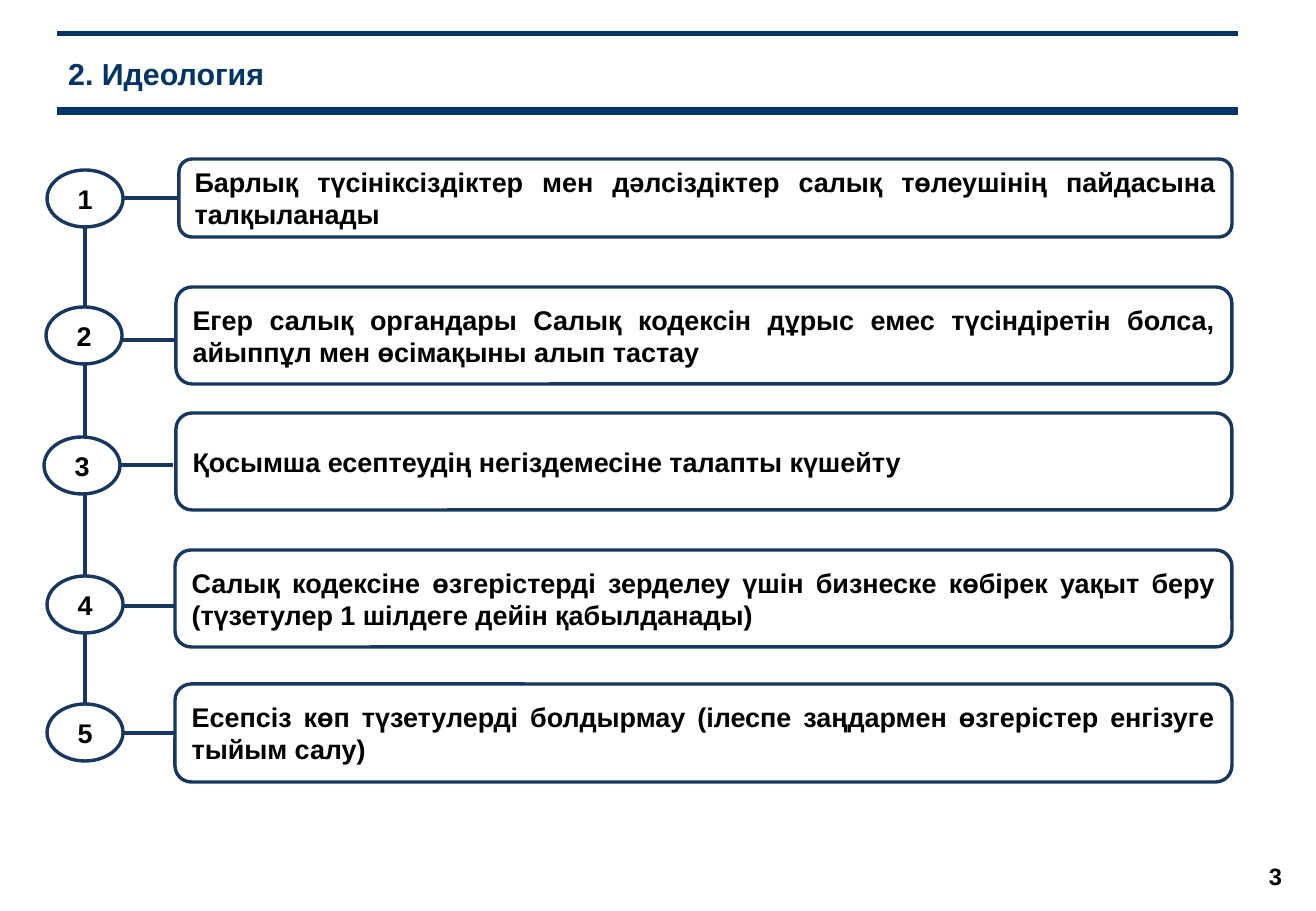
"""Build the ideology slide: five numbered principles on a vertical spine."""
import pptx
import pptx.util
import pptx.dml.color
import pptx.enum.shapes
import pptx.enum.text
import pptx.oxml.ns
from lxml import etree

PX = 7526
COLORS = {"header": "003366", "outline": "17375E", "text": "000000", "white": "FFFFFF"}
SHAPES = pptx.enum.shapes.MSO_SHAPE
ALIGN = pptx.enum.text.PP_ALIGN
MIDDLE = pptx.enum.text.MSO_ANCHOR.MIDDLE


def add_line(x1, y1, x2, y2, color, width):
    line = slide.shapes.add_connector(
        pptx.enum.shapes.MSO_CONNECTOR.STRAIGHT, x1 * PX, y1 * PX, x2 * PX, y2 * PX)
    line.line.color.rgb = pptx.dml.color.RGBColor.from_string(COLORS[color])
    line.line.width = pptx.util.Pt(width)
    etree.SubElement(line._element.spPr, pptx.oxml.ns.qn("a:effectLst"))
    return line


def add_label(kind, left, top, width, height, text, align, size=16, outlined=True):
    label = slide.shapes.add_shape(kind, left * PX, top * PX, width * PX, height * PX)
    label.shadow.inherit = False
    label.fill.solid()
    label.fill.fore_color.rgb = pptx.dml.color.RGBColor.from_string(COLORS["white"])
    if outlined:
        label.line.color.rgb = pptx.dml.color.RGBColor.from_string(COLORS["outline"])
        label.line.width = pptx.util.Pt(2)
    else:
        label.line.fill.background()
    label.text_frame.word_wrap = True
    label.text_frame.vertical_anchor = MIDDLE
    paragraph = label.text_frame.paragraphs[0]
    paragraph.text = text
    paragraph.alignment = align
    paragraph.font.name = "Arial"
    paragraph.font.size = pptx.util.Pt(size)
    paragraph.font.bold = True
    paragraph.font.color.rgb = pptx.dml.color.RGBColor.from_string(COLORS["text"])
    return label


deck = pptx.Presentation()
deck.slide_width = 1316 * PX
deck.slide_height = 911 * PX
slide = deck.slides.add_slide(deck.slide_layouts[5])

add_line(1238, 111, 57, 111, "header", 4.5)
add_line(1238, 34, 57, 34, "header", 3)
add_label(SHAPES.RECTANGLE, 1236, 843, 79, 67, "3", ALIGN.CENTER, 14, outlined=False)

title = slide.shapes.title
title.left, title.top, title.width, title.height = 56 * PX, 35 * PX, 1187 * PX, 77 * PX
title.text_frame.vertical_anchor = MIDDLE
heading = title.text_frame.paragraphs[0]
heading.text = "2. Идеология"
heading.alignment = ALIGN.LEFT
heading.font.name = "Arial"
heading.font.size = pptx.util.Pt(18)
heading.font.bold = True
heading.font.color.rgb = pptx.dml.color.RGBColor.from_string(COLORS["header"])

add_line(85, 227, 85, 761, "outline", 2)

# (number left, number top, box left, box top, box height, link start, link y, link end, text)
principles = [
    (47, 170, 179, 159, 78, 123, 198, 179,
     "Барлық түсініксіздіктер мен дәлсіздіктер салық төлеушінің пайдасына талқыланады"),
    (46, 307, 176, 287, 97, 123, 340, 176,
     "Егер салық органдары Салық кодексін дұрыс емес түсіндіретін болса, айыппұл мен өсімақыны алып тастау"),
    (44, 437, 176, 413, 97, 119, 465, 173,
     "Қосымша есептеудің негіздемесіне талапты күшейту"),
    (47, 576, 175, 550, 97, 122, 606, 175,
     "Салық кодексіне өзгерістерді зерделеу үшін бизнеске көбірек уақыт беру (түзетулер 1 шілдеге дейін қабылданады)"),
    (47, 704, 175, 684, 98, 124, 733, 175,
     "Есепсіз көп түзетулерді болдырмау (ілеспе заңдармен өзгерістер енгізуге тыйым салу)"),
]
BOX_RIGHT = 1232
for number, principle in enumerate(principles, 1):
    number_left, number_top, box_left, box_top, box_height, link_start, link_y, link_end, text = principle
    box = add_label(SHAPES.ROUNDED_RECTANGLE, box_left, box_top, BOX_RIGHT - box_left, box_height,
                    text, ALIGN.JUSTIFY)
    add_label(SHAPES.OVAL, number_left, number_top, 76, 57, str(number), ALIGN.CENTER)
    link = add_line(link_start, link_y, link_end, link_y, "outline", 2)
    if link_y * 2 == box_top * 2 + box_height:
        link.end_connect(box, 1)

deck.save("out.pptx")
